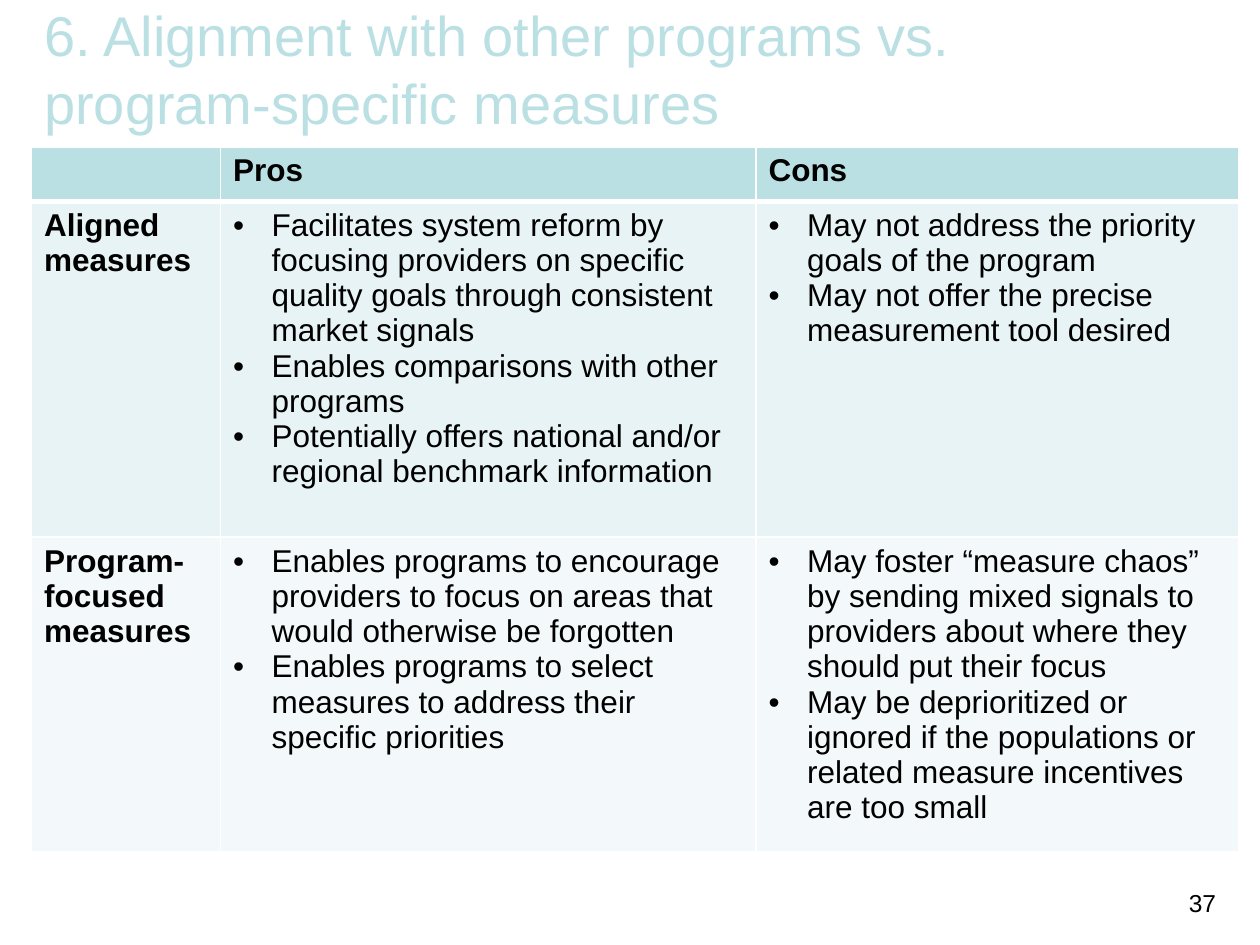
from dataclasses import dataclass

from lxml.etree import SubElement
from pptx import Presentation
from pptx.dml.color import RGBColor
from pptx.enum.text import MSO_ANCHOR, MSO_AUTO_SIZE, PP_ALIGN
from pptx.oxml.ns import qn
from pptx.slide import Slide
from pptx.table import _Cell
from pptx.text.text import _Paragraph
from pptx.util import Pt


@dataclass(frozen=True)
class Theme:
    font: str = "Arial"
    accent: str = "BBE0E3"
    ink: str = "000000"
    rule: str = "FFFFFF"
    bands: tuple[str, ...] = ("E7F3F4", "F3F9FA")
    title_size: int = 32
    table_size: int = 18
    number_size: int = 14
    thin_rule: int = 1
    header_rule: int = 3
    bullet_indent: int = 22


@dataclass(frozen=True)
class Approach:
    name: str
    pros: tuple[str, ...]
    cons: tuple[str, ...]


THEME = Theme()
HEADINGS = ("", "Pros", "Cons")
COLUMN_WIDTHS = (108, 306, 276)
ROW_HEIGHTS = (31, 192, 168)
APPROACHES = (
    Approach(
        "Aligned measures",
        (
            "Facilitates system reform by focusing providers on specific "
            "quality goals through consistent market signals",
            "Enables comparisons with other programs",
            "Potentially offers national and/or regional benchmark information",
        ),
        (
            "May not address the priority goals of the program",
            "May not offer the precise measurement tool desired",
        ),
    ),
    Approach(
        "Program-focused measures",
        (
            "Enables programs to encourage providers to focus on areas that "
            "would otherwise be forgotten",
            "Enables programs to select measures to address their specific priorities",
        ),
        (
            "May foster “measure chaos” by sending mixed signals to providers "
            "about where they should put their focus",
            "May be deprioritized or ignored if the populations or related "
            "measure incentives are too small",
        ),
    ),
)


def style_runs(paragraph: _Paragraph, size: int, color: str, bold: bool = False) -> None:
    for run in paragraph.runs:
        run.font.name = THEME.font
        run.font.size = Pt(size)
        run.font.bold = bold
        run.font.color.rgb = RGBColor.from_string(color)


def add_bullet(paragraph: _Paragraph) -> None:
    properties = paragraph._p.get_or_add_pPr()
    indent = Pt(THEME.bullet_indent)
    properties.set("marL", str(indent))
    properties.set("indent", str(-indent))
    SubElement(properties, qn("a:buFont"), typeface=THEME.font)
    SubElement(properties, qn("a:buChar"), char="•")


def set_borders(cell: _Cell, top: int, bottom: int) -> None:
    properties = cell._tc.get_or_add_tcPr()
    widths = {"L": THEME.thin_rule, "R": THEME.thin_rule, "T": top, "B": bottom}
    for side, width in widths.items():
        line = SubElement(properties, qn(f"a:ln{side}"), w=str(Pt(width)))
        SubElement(SubElement(line, qn("a:solidFill")), qn("a:srgbClr"), val=THEME.rule)


def fill_cell(cell: _Cell, lines: tuple[str, ...], color: str, bulleted: bool) -> None:
    cell.fill.solid()
    cell.fill.fore_color.rgb = RGBColor.from_string(color)
    cell.text_frame.text = "\n".join(lines)
    for paragraph in cell.text_frame.paragraphs:
        if bulleted:
            add_bullet(paragraph)
        style_runs(paragraph, THEME.table_size, THEME.ink, bold=not bulleted)


def add_title(slide: Slide, text: str) -> None:
    title = slide.shapes.title
    title.left, title.top, title.width, title.height = Pt(18), Pt(-6), Pt(612), Pt(90)
    frame = title.text_frame
    frame.text = text
    frame.word_wrap = True
    frame.auto_size = MSO_AUTO_SIZE.NONE
    frame.vertical_anchor = MSO_ANCHOR.MIDDLE
    heading = frame.paragraphs[0]
    heading.alignment = PP_ALIGN.LEFT
    style_runs(heading, THEME.title_size, THEME.accent)


def add_page_number(slide: Slide, text: str) -> None:
    frame = slide.shapes.add_textbox(Pt(660), Pt(504), Pt(42), Pt(18)).text_frame
    frame.word_wrap = True
    frame.text = text
    number = frame.paragraphs[0]
    number.alignment = PP_ALIGN.RIGHT
    style_runs(number, THEME.number_size, THEME.ink)


def add_comparison(slide: Slide) -> None:
    table = slide.shapes.add_table(
        len(ROW_HEIGHTS), len(COLUMN_WIDTHS),
        Pt(18), Pt(84), Pt(sum(COLUMN_WIDTHS)), Pt(sum(ROW_HEIGHTS)),
    ).table
    for column, width in zip(table.columns, COLUMN_WIDTHS):
        column.width = Pt(width)
    contents = [tuple((heading,) for heading in HEADINGS)]
    contents += [((a.name,), a.pros, a.cons) for a in APPROACHES]
    colors = (THEME.accent, *THEME.bands)
    for r, (row, height) in enumerate(zip(table.rows, ROW_HEIGHTS)):
        row.height = Pt(height)
        top = THEME.header_rule if r == 1 else THEME.thin_rule
        bottom = THEME.header_rule if r == 0 else THEME.thin_rule
        for c, cell in enumerate(row.cells):
            set_borders(cell, top, bottom)
            fill_cell(cell, contents[r][c], colors[r], bulleted=r > 0 and c > 0)


def main() -> None:
    presentation = Presentation()
    presentation.slide_width, presentation.slide_height = Pt(720), Pt(540)
    slide = presentation.slides.add_slide(presentation.slide_layouts[5])
    add_title(slide, "6. Alignment with other programs vs. program-specific measures")
    add_page_number(slide, "37")
    add_comparison(slide)
    presentation.save("out.pptx")


if __name__ == "__main__":
    main()
